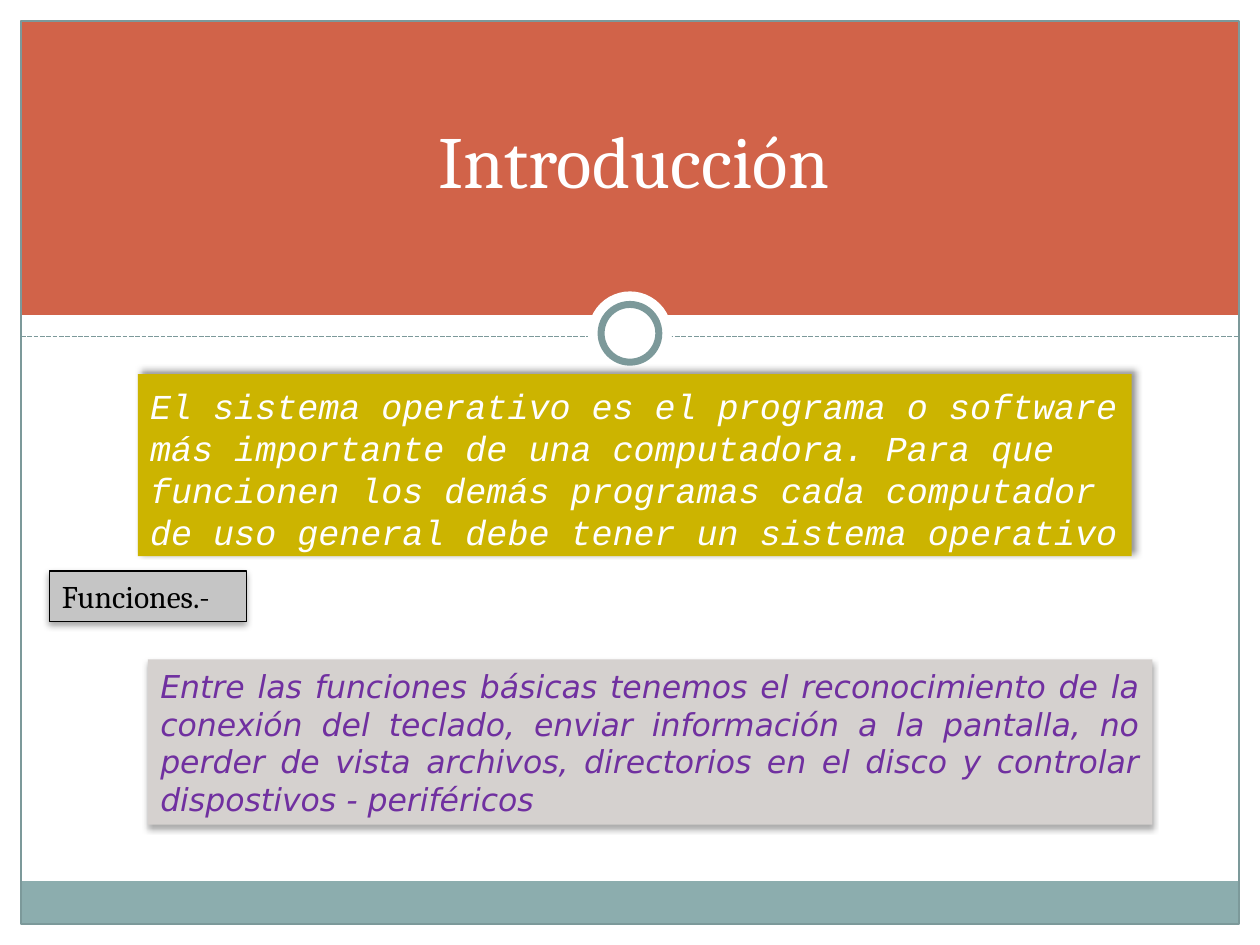
from lxml.etree import SubElement
from pptx import Presentation
from pptx.dml.color import RGBColor
from pptx.enum.dml import MSO_LINE_DASH_STYLE as DASH
from pptx.enum.shapes import MSO_CONNECTOR as CONN, MSO_SHAPE as SHAPE
from pptx.enum.text import MSO_ANCHOR as ANCHOR, PP_ALIGN as ALIGN
from pptx.oxml.ns import qn
from pptx.util import Pt

W, H, EDGE = 720, 540, 12
INNER = W - 2 * EDGE
WHITE, TEAL = "FFFFFF", "7C999A"
TITLE = "Introducción"
RULE_Y = 192.25

FRAME = [
    (SHAPE.RECTANGLE, (EDGE, 11.5, INNER, 168.5), "D16349", None, 0),
    (SHAPE.RECTANGLE, (EDGE, 503.5, INNER, 24.5), "8CADAE", None, 0),
    (SHAPE.RECTANGLE, (EDGE, EDGE, INNER, H - 2 * EDGE), None, TEAL, 0.75),
]
RINGS = [
    (SHAPE.OVAL, (336, 166.5, 48, 48), WHITE, None, 0),
    (SHAPE.OVAL, (343.5, 174, 33, 33), WHITE, TEAL, 4),
]
BOXES = [
    dict(text="El sistema operativo es el programa o software más importante de una "
              "computadora. Para que funcionen los demás programas cada computador de "
              "uso general debe tener un sistema operativo",
         at=(78.75, 213.75, 568, 104), fill="CCB400", line=None, shadow=(40, 4, 3, 315),
         font=("Courier New", 20, WHITE, True), align=ALIGN.LEFT, pitch=Pt(24), top=6),
    dict(text="Funciones.-",
         at=(28.25, 326.25, 112.5, 29), fill="C5C5C5", line="000000", shadow=(35, 4, 2, 90),
         font=("Cambria", 18, "000000", False), align=ALIGN.LEFT, pitch=1.0, top=3.6),
    dict(text="Entre las funciones básicas tenemos el reconocimiento de la conexión del "
              "teclado, enviar información a la pantalla, no perder de vista archivos, "
              "directorios en el disco y controlar dispostivos - periféricos",
         at=(84.5, 376.75, 574, 94.5), fill="D5D1CF", line=None, shadow=(32, 3.5, 2.2, 90),
         font=("DejaVu Sans", 18, "7030A0", True), align=ALIGN.JUSTIFY, pitch=Pt(21.5), top=4.6),
]


def rgb(code):
    """Return the colour for a hex string."""
    return RGBColor.from_string(code)


def add_shape(slide, kind, at, fill, line, width):
    """Add a flat preset shape with optional fill and outline."""
    sp = slide.shapes.add_shape(kind, *map(Pt, at))
    sp.shadow.inherit = False
    if fill:
        sp.fill.solid()
        sp.fill.fore_color.rgb = rgb(fill)
    else:
        sp.fill.background()
    if line:
        sp.line.color.rgb = rgb(line)
        sp.line.width = Pt(width)
    else:
        sp.line.fill.background()
    return sp


def add_rule(slide):
    """Add the dashed rule under the title band."""
    ln = slide.shapes.add_connector(CONN.STRAIGHT, *map(Pt, (EDGE, RULE_Y, W - EDGE, RULE_Y)))
    ln.line.color.rgb = rgb(TEAL)
    ln.line.width = Pt(0.9)
    ln.line.dash_style = DASH.SQUARE_DOT
    SubElement(ln._element.spPr, qn("a:effectLst"))


def set_shadow(sp, alpha, blur, dist, angle):
    """Give a shape a black outer shadow."""
    effects = sp._element.spPr.find(qn("a:effectLst"))
    outer = SubElement(effects, qn("a:outerShdw"), blurRad=str(Pt(blur)), dist=str(Pt(dist)),
                       dir=str(angle * 60000), algn="ctr", rotWithShape="0")
    color = SubElement(outer, qn("a:srgbClr"), val="000000")
    SubElement(color, qn("a:alpha"), val=str(alpha * 1000))


def set_text(sp, text, font, align, anchor):
    """Write one formatted run and return its paragraph."""
    tf = sp.text_frame
    tf.word_wrap = True
    tf.vertical_anchor = anchor
    p = tf.paragraphs[0]
    p.alignment = align
    r = p.add_run()
    r.text = text
    name, size, color, italic = font
    r.font.name, r.font.size, r.font.italic = name, Pt(size), italic
    r.font.color.rgb = rgb(color)
    return p


def add_title(slide):
    """Place and format the title above the band."""
    sp = slide.shapes.title
    sp.left, sp.top, sp.width, sp.height = map(Pt, (56.25, 0, 612, 120))
    set_text(sp, TITLE, ("Cambria", 42, WHITE, False), ALIGN.CENTER, ANCHOR.BOTTOM)
    slide.shapes._spTree.append(sp._element)


def add_box(slide, box):
    """Add a shadowed text panel."""
    sp = add_shape(slide, SHAPE.RECTANGLE, box["at"], box["fill"], box["line"], 0.75)
    set_shadow(sp, *box["shadow"])
    p = set_text(sp, box["text"], box["font"], box["align"], ANCHOR.TOP)
    p.line_spacing = box["pitch"]
    sp.text_frame.margin_top = Pt(box["top"])


def main():
    """Build and save the slide."""
    prs = Presentation()
    prs.slide_width, prs.slide_height = Pt(W), Pt(H)
    slide = prs.slides.add_slide(prs.slide_layouts[5])
    for item in FRAME:
        add_shape(slide, *item)
    add_rule(slide)
    for item in RINGS:
        add_shape(slide, *item)
    add_title(slide)
    for box in BOXES:
        add_box(slide, box)
    prs.save("out.pptx")


if __name__ == "__main__":
    main()
